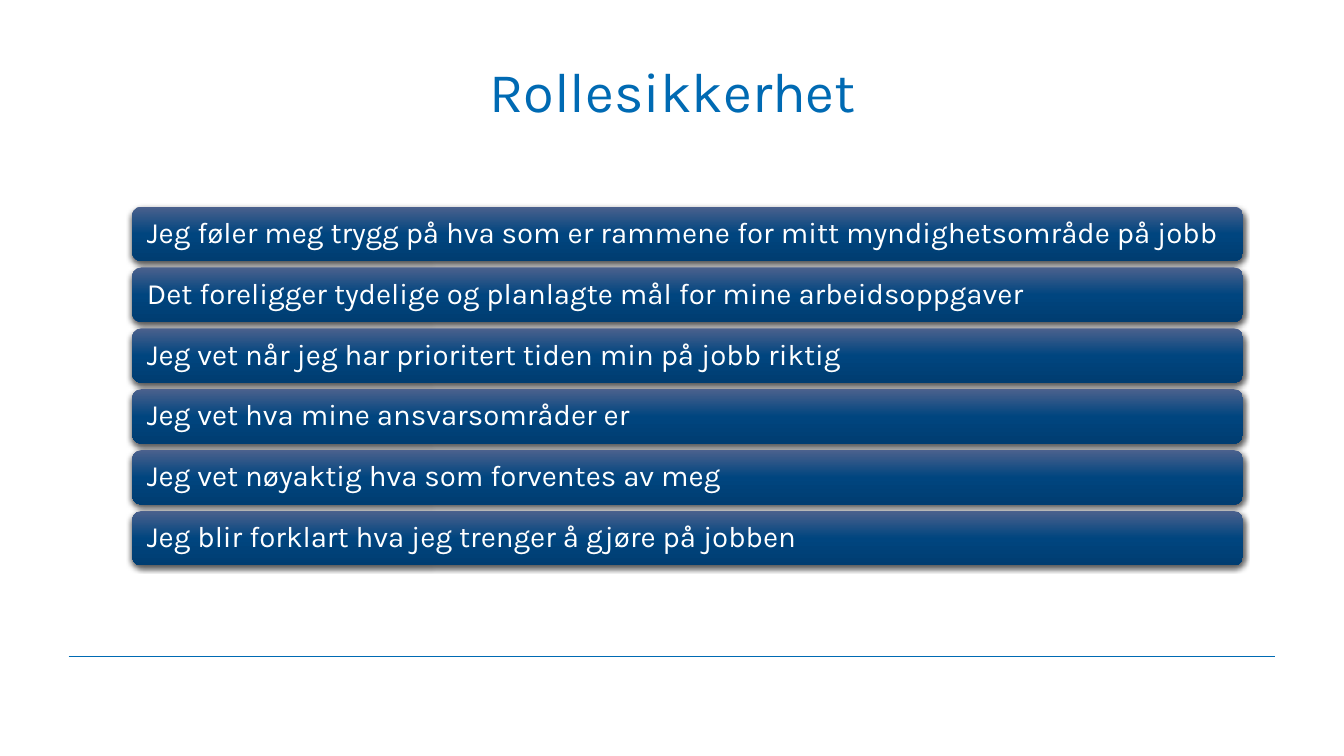
"""Build the Rollesikkerhet slide: a title, six statement bars and a footer rule."""
from lxml import etree
from pptx import Presentation
from pptx.dml.color import RGBColor
from pptx.enum.shapes import MSO_CONNECTOR, MSO_SHAPE
from pptx.enum.text import MSO_ANCHOR, MSO_AUTO_SIZE, PP_ALIGN
from pptx.oxml import parse_xml
from pptx.oxml.ns import qn
from pptx.util import Inches, Pt

STRAIGHT = MSO_CONNECTOR.STRAIGHT
ROUNDED = MSO_SHAPE.ROUNDED_RECTANGLE
MIDDLE = MSO_ANCHOR.MIDDLE
NO_AUTOFIT = MSO_AUTO_SIZE.NONE
CENTER, LEFT = PP_ALIGN.CENTER, PP_ALIGN.LEFT

FONT = "Karla"
BLUE = "006AB3"
WHITE = "FFFFFF"
NAMESPACE = 'xmlns:a="http://schemas.openxmlformats.org/drawingml/2006/main"'
BAR_GRADIENT = f"""<a:gradFill {NAMESPACE} rotWithShape="1"><a:gsLst>
<a:gs pos="0"><a:srgbClr val="4B618D"/></a:gs>
<a:gs pos="50000"><a:srgbClr val="00457F"/></a:gs>
<a:gs pos="100000"><a:srgbClr val="003D71"/></a:gs>
</a:gsLst><a:lin ang="5400000" scaled="0"/></a:gradFill>"""
BAR_SHADOW = f"""<a:outerShdw {NAMESPACE} blurRad="57150" dist="19050" dir="5400000"
algn="ctr" rotWithShape="0"><a:srgbClr val="000000"><a:alpha val="63000"/></a:srgbClr>
</a:outerShdw>"""

STATEMENTS = [
    "Jeg føler meg trygg på hva som er rammene for mitt myndighetsområde på jobb",
    "Det foreligger tydelige og planlagte mål for mine arbeidsoppgaver",
    "Jeg vet når jeg har prioritert tiden min på jobb riktig",
    "Jeg vet hva mine ansvarsområder er",
    "Jeg vet nøyaktig hva som forventes av meg",
    "Jeg blir forklart hva jeg trenger å gjøre på jobben",
]
BAR_LEFT, BAR_TOP, BAR_WIDTH, BAR_HEIGHT = 1.31, 2.05, 11.02, 0.54
BAR_PITCH = 0.604


def color(value):
    return RGBColor.from_string(value)


def write_text(shape, text, size, text_color, alignment):
    frame = shape.text_frame
    frame.word_wrap = True
    frame.auto_size = NO_AUTOFIT
    frame.vertical_anchor = MIDDLE
    paragraph = frame.paragraphs[0]
    paragraph.alignment = alignment
    paragraph.line_spacing = 0.9
    run = paragraph.add_run()
    run.text = text
    run.font.name = FONT
    run.font.size = Pt(size)
    run.font.color.rgb = color(text_color)


presentation = Presentation()
presentation.slide_width = Inches(13.33)
presentation.slide_height = Inches(7.5)
slide = presentation.slides.add_slide(presentation.slide_layouts[5])

rule = slide.shapes.add_connector(
    STRAIGHT, Inches(0.68), Inches(6.51), Inches(12.65), Inches(6.51))
rule.line.color.rgb = color(BLUE)
rule.line.width = Pt(0.5)
etree.SubElement(rule._element.spPr, qn("a:effectLst"))

title = slide.shapes.title
title.left, title.top = Inches(1.16), Inches(0.25)
title.width, title.height = Inches(11.02), Inches(1.38)
write_text(title, "Rollesikkerhet", 40, BLUE, CENTER)

for index, statement in enumerate(STATEMENTS):
    bar = slide.shapes.add_shape(
        ROUNDED, Inches(BAR_LEFT), Inches(BAR_TOP + index * BAR_PITCH),
        Inches(BAR_WIDTH), Inches(BAR_HEIGHT))
    bar.adjustments[0] = 0.17
    properties = bar._element.spPr
    properties.append(parse_xml(BAR_GRADIENT))
    bar.line.fill.background()
    bar.shadow.inherit = False
    properties.find(qn("a:effectLst")).append(parse_xml(BAR_SHADOW))
    frame = bar.text_frame
    frame.margin_left = frame.margin_right = Inches(0.12)
    write_text(bar, statement, 21, WHITE, LEFT)

presentation.save("out.pptx")
